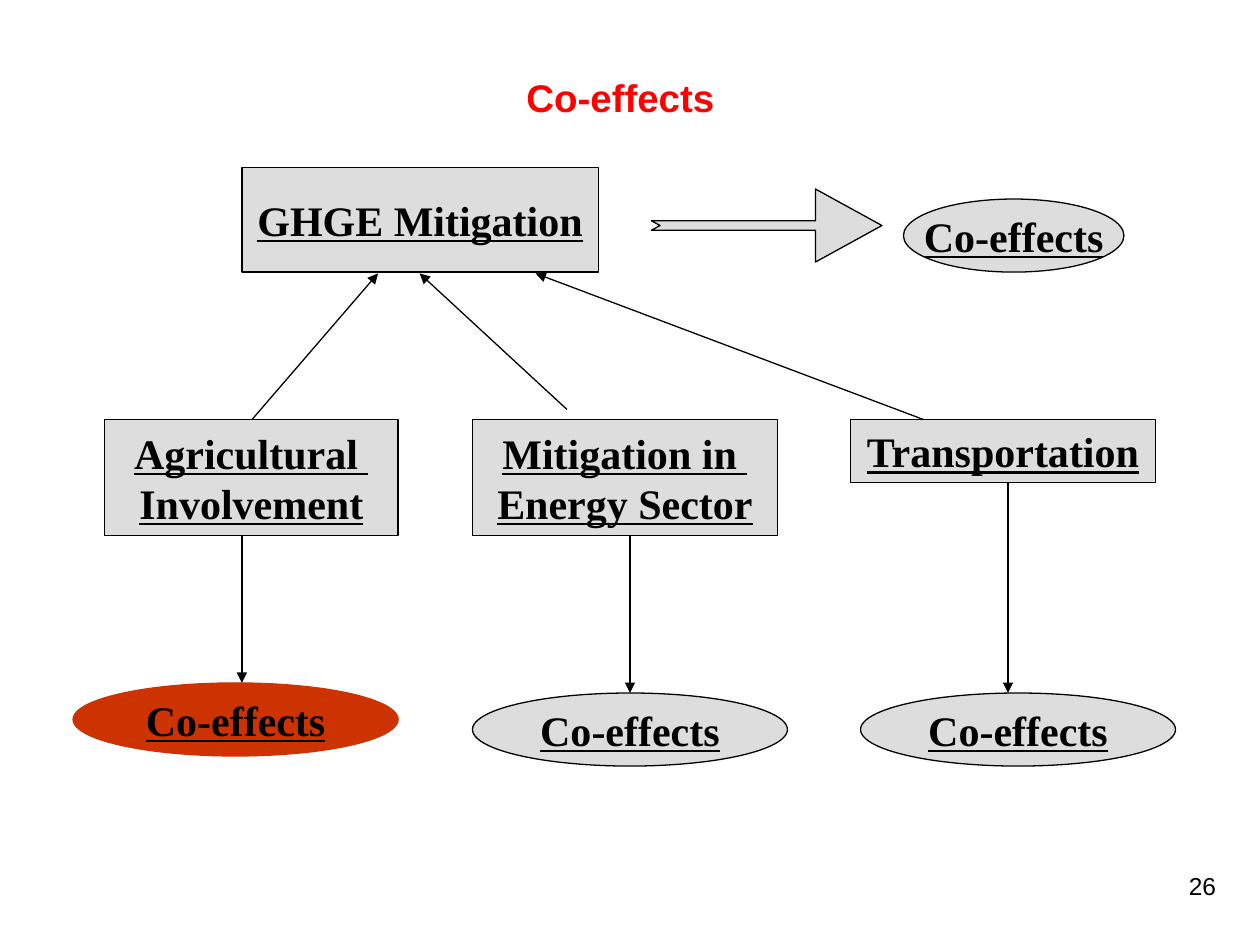
from dataclasses import dataclass
from lxml import etree
from pptx import Presentation
from pptx.dml.color import RGBColor
from pptx.enum.shapes import MSO_CONNECTOR, MSO_SHAPE
from pptx.enum.text import MSO_ANCHOR, PP_ALIGN
from pptx.oxml.ns import qn
from pptx.util import Inches, Pt

RECT, OVAL = MSO_SHAPE.RECTANGLE, MSO_SHAPE.OVAL
NOTCHED_ARROW = MSO_SHAPE.NOTCHED_RIGHT_ARROW
STRAIGHT = MSO_CONNECTOR.STRAIGHT
TOP, MIDDLE, BOTTOM = MSO_ANCHOR.TOP, MSO_ANCHOR.MIDDLE, MSO_ANCHOR.BOTTOM
CENTER, RIGHT = PP_ALIGN.CENTER, PP_ALIGN.RIGHT


@dataclass(frozen=True)
class Theme:
    ink: str = "000000"
    title: str = "FF0000"
    node: str = "DDDDDD"
    highlight: str = "CC3300"
    heading_font: str = "Arial"
    node_font: str = "Times New Roman"
    title_size: int = 22
    node_size: int = 24
    number_size: int = 14
    line_width: float = 0.75


THEME = Theme()
TITLE, PAGE_NUMBER = "Co-effects", "26"
EFFECT = ["Co-effects"]
EFFECT_HEIGHT = 0.58
GOAL = (["GHGE Mitigation"], 1.92, 1.33, 2.83, 0.83)
GOAL_EFFECT = (7.17, 1.58, 1.75)
GOAL_ARROW = (5.17, 1.5, 1.83, 0.58)
SECTOR_TOP = 3.33
GOAL_BOTTOM = 2.17

SECTORS = [
    dict(lines=["Agricultural ", "Involvement"], left=0.83, width=2.33, height=0.92,
         up=((2, 3.33), 3), down=1.92, effect=(0.58, 5.42, 2.58), highlight=True),
    dict(lines=["Mitigation in ", "Energy Sector"], left=3.75, width=2.42, height=0.92,
         up=((4.5, 3.25), 3.33), down=5, effect=(3.75, 5.5, 2.5), highlight=False),
    dict(lines=["Transportation"], left=6.75, width=2.42, height=0.5,
         up=((7.33, 3.33), 4.25), down=8, effect=(6.83, 5.5, 2.5), highlight=False),
]


def rgb(color):
    return RGBColor.from_string(color)


def write(frame, lines, font=THEME.node_font, size=THEME.node_size, color=THEME.ink,
          bold=True, underline=True, align=CENTER, anchor=MIDDLE, wrap=False):
    frame.word_wrap = wrap
    frame.vertical_anchor = anchor
    for index, line in enumerate(lines):
        paragraph = frame.paragraphs[0] if index == 0 else frame.add_paragraph()
        paragraph.alignment = align
        run = paragraph.add_run()
        run.text = line
        run.font.name, run.font.size = font, Pt(size)
        run.font.bold, run.font.underline = bold, underline
        run.font.color.rgb = rgb(color)


def add_node(slide, kind, left, top, width, height, lines=(),
             fill=THEME.node, outline=THEME.ink):
    node = slide.shapes.add_shape(kind, *map(Inches, (left, top, width, height)))
    node.shadow.inherit = False
    node.fill.solid()
    node.fill.fore_color.rgb = rgb(fill)
    node.line.color.rgb = rgb(outline)
    node.line.width = Pt(THEME.line_width)
    write(node.text_frame, lines)
    return node


def add_arrow(slide, start, end):
    arrow = slide.shapes.add_connector(STRAIGHT, *map(Inches, (*start, *end)))
    arrow.line.color.rgb = rgb(THEME.ink)
    arrow.line.width = Pt(THEME.line_width)
    etree.SubElement(arrow.line._get_or_add_ln(), qn("a:tailEnd"), type="triangle")
    etree.SubElement(arrow._element.spPr, qn("a:effectLst"))


def add_label(slide, text, left, top, width, height, **style):
    label = slide.shapes.add_textbox(*map(Inches, (left, top, width, height)))
    write(label.text_frame, [text], font=THEME.heading_font,
          underline=False, wrap=True, **style)
    return label.text_frame


def main():
    deck = Presentation()
    deck.slide_width, deck.slide_height = Inches(10), Inches(7.5)
    slide = deck.slides.add_slide(deck.slide_layouts[6])

    number = add_label(slide, PAGE_NUMBER, 7.67, 6.83, 2.08, 0.5, bold=False,
                       size=THEME.number_size, align=RIGHT, anchor=TOP)
    number.margin_top = Inches(0.08)
    title = add_label(slide, TITLE, 0.75, 0.25, 8.5, 0.75, size=THEME.title_size,
                      color=THEME.title, anchor=BOTTOM)
    title.margin_right = Inches(0.25)

    goal_lines, *goal_box = GOAL
    add_node(slide, RECT, *goal_box, goal_lines)
    goal_arrow = add_node(slide, NOTCHED_ARROW, *GOAL_ARROW)
    goal_arrow.adjustments[0] = 0.13
    goal_arrow.adjustments[1] = 0.91
    add_node(slide, OVAL, *GOAL_EFFECT, EFFECT_HEIGHT, EFFECT)

    for sector in SECTORS:
        add_node(slide, RECT, sector["left"], SECTOR_TOP, sector["width"],
                 sector["height"], sector["lines"])
        colors = {}
        if sector["highlight"]:
            colors = dict(fill=THEME.highlight, outline=THEME.highlight)
        add_node(slide, OVAL, *sector["effect"], EFFECT_HEIGHT, EFFECT, **colors)
        start, goal_x = sector["up"]
        add_arrow(slide, start, (goal_x, GOAL_BOTTOM))
        add_arrow(slide, (sector["down"], SECTOR_TOP + sector["height"]),
                  (sector["down"], sector["effect"][1]))

    deck.save("out.pptx")


if __name__ == "__main__":
    main()
